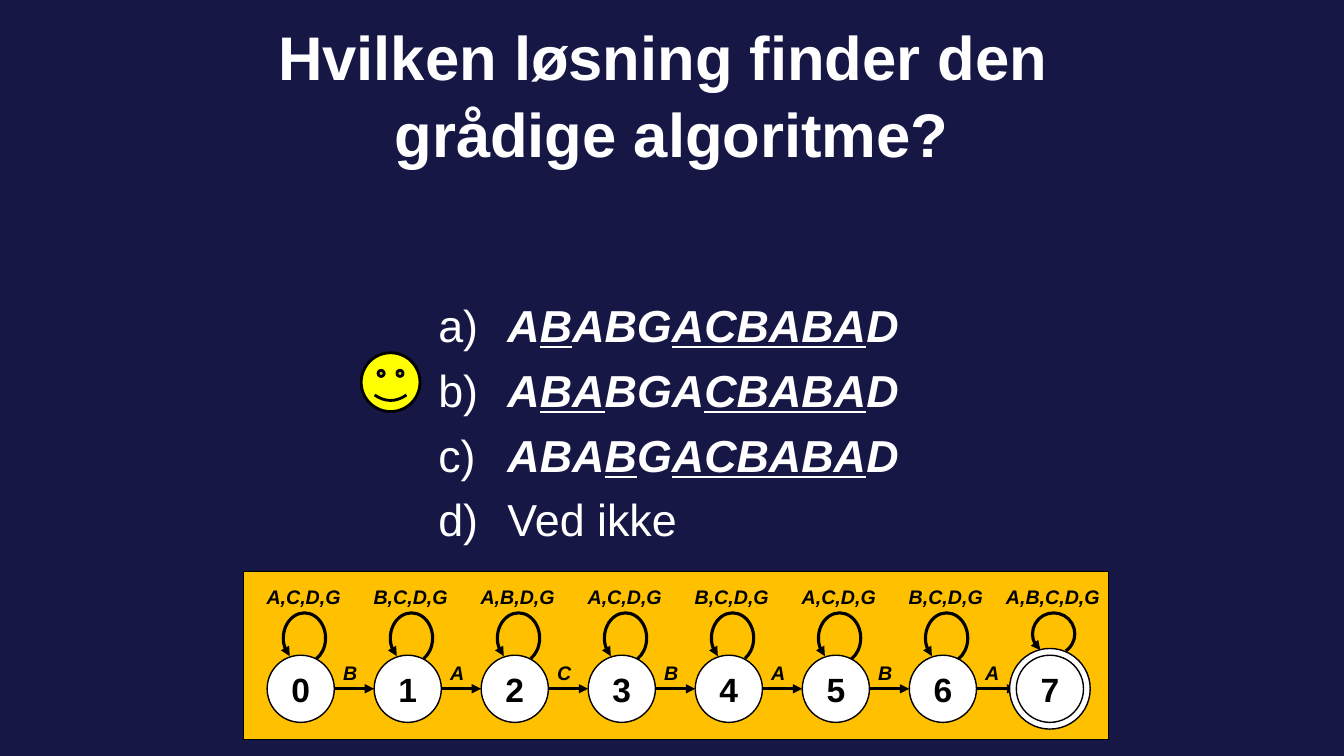
from lxml.etree import SubElement
from pptx import Presentation
from pptx.dml.color import RGBColor
from pptx.enum.shapes import MSO_CONNECTOR, MSO_SHAPE
from pptx.enum.text import MSO_ANCHOR, PP_ALIGN
from pptx.oxml.ns import qn
from pptx.util import Pt

WHITE, BLACK, YELLOW, AMBER, NAVY = "FFFFFF", "000000", "FFFF00", "FFC000", "171745"
STEP = 76.45
STATE_LEFT, STATE_TOP, STATE_SIZE = 190.8, 468, 48
LOOP_LABELS = ["A,C,D,G", "B,C,D,G", "A,B,D,G", "A,C,D,G",
               "B,C,D,G", "A,C,D,G", "B,C,D,G", "A,B,C,D,G"]
LOOP_ENDS = [36.49, 35.42, 35.42, 36.27, 34.78, 36.03, 36.03, 32.61]
MOVE_LABELS = "BACBABA"
ANSWERS = ["A|B|ABG|ACBABA|D", "A|BA|BGA|CBABA|D", "ABA|B|G|ACBABA|D"]


def rgb(value):
    """Turn a hex string into a colour."""
    return RGBColor.from_string(value)


def box(left, top, width, height):
    """Give a position and size in points."""
    return Pt(left), Pt(top), Pt(width), Pt(height)


def style_font(paragraph, size, color, bold=False, italic=False):
    """Set the font of a whole paragraph."""
    font = paragraph.font
    font.name, font.size = "Arial", Pt(size)
    font.bold, font.italic = bold, italic
    font.color.rgb = rgb(color)


def add_figure(shapes, preset, place, fill, weight):
    """Add a black-outlined preset shape."""
    figure = shapes.add_shape(preset, *box(*place))
    figure.shadow.inherit = False
    if fill:
        figure.fill.solid()
        figure.fill.fore_color.rgb = rgb(fill)
    else:
        figure.fill.background()
    figure.line.color.rgb = rgb(BLACK)
    figure.line.width = Pt(weight)
    return figure


def add_text(shapes, place, text, size, color, italic=False, anchor=MSO_ANCHOR.TOP):
    """Add a centred bold text box."""
    frame = shapes.add_textbox(*box(*place)).text_frame
    frame.word_wrap = True
    frame.vertical_anchor = anchor
    paragraph = frame.paragraphs[0]
    paragraph.text = text
    paragraph.alignment = PP_ALIGN.CENTER
    style_font(paragraph, size, color, True, italic)
    return paragraph


def add_arrowhead(line, end):
    """Put a triangle on the headEnd or tailEnd of a line."""
    SubElement(line.line._get_or_add_ln(), qn(f"a:{end}"), type="triangle")


def add_state(shapes, number):
    """Add the numbered circle of a state."""
    place = (STATE_LEFT + number * STEP, STATE_TOP, STATE_SIZE, STATE_SIZE)
    state = add_figure(shapes, MSO_SHAPE.OVAL, place, WHITE, 1)
    frame = state.text_frame
    frame.vertical_anchor = MSO_ANCHOR.MIDDLE
    paragraph = frame.paragraphs[0]
    paragraph.text = str(number)
    paragraph.alignment = PP_ALIGN.CENTER
    style_font(paragraph, 24, BLACK, True)


def add_loop(shapes, number, label, end):
    """Add the labelled arc from a state back to itself."""
    offset = number * STEP
    height = 30 if number == len(MOVE_LABELS) else 36
    loop = add_figure(shapes, MSO_SHAPE.ARC, (202.4 + offset, 437.8, 30.2, height), None, 2.25)
    loop.adjustments[0], loop.adjustments[1] = 77.48, end
    add_arrowhead(loop, "headEnd")
    add_text(shapes, (174.9 + offset, 414, 84, 24.5), label, 14, BLACK, True)


def add_move(shapes, number, label):
    """Add the labelled arrow from a state to the next."""
    offset = number * STEP
    start = STATE_LEFT + STATE_SIZE + offset
    middle = STATE_TOP + STATE_SIZE / 2
    move = shapes.add_connector(MSO_CONNECTOR.STRAIGHT, Pt(start), Pt(middle),
                                Pt(STATE_LEFT + STEP + offset), Pt(middle))
    move.line.color.rgb = rgb(BLACK)
    move.line.width = Pt(2.25)
    add_arrowhead(move, "tailEnd")
    SubElement(move._element.spPr, qn("a:effectLst"))
    add_text(shapes, (208.1 + offset, 468.7, 84, 24.5), label, 14, BLACK, True)


def add_automaton(shapes):
    """Add the state machine on its panel."""
    add_figure(shapes, MSO_SHAPE.RECTANGLE, (174, 408, 618, 120), AMBER, 0.75)
    for number, (label, end) in enumerate(zip(LOOP_LABELS, LOOP_ENDS)):
        add_loop(shapes, number, label, end)
    final = len(MOVE_LABELS)
    for number, label in enumerate(MOVE_LABELS):
        add_state(shapes, number)
        add_move(shapes, number, label)
    rim = (STATE_LEFT + final * STEP - 4.8, STATE_TOP - 4.8, 57.6, 57.6)
    add_figure(shapes, MSO_SHAPE.OVAL, rim, WHITE, 1)
    add_state(shapes, final)


def format_answer(paragraph):
    """Give an answer its letter, indent and spacing."""
    style_font(paragraph, 32, WHITE)
    paragraph.space_before = Pt(6.4)
    paragraph.line_spacing = 1.04
    properties = paragraph._p.get_or_add_pPr()
    properties.set("marL", str(Pt(40.5)))
    properties.set("indent", str(-Pt(40.5)))
    letter = properties.makeelement(qn("a:buAutoNum"), {"type": "alphaLcParenR"})
    properties.insert_element_before(letter, "a:tabLst", "a:defRPr", "a:extLst")


def add_answers(shapes):
    """Add the lettered answers, every second part underlined."""
    frame = shapes.add_textbox(*box(306, 207.4, 408, 260.6)).text_frame
    frame.word_wrap = True
    for index, answer in enumerate(ANSWERS):
        paragraph = frame.paragraphs[0] if index == 0 else frame.add_paragraph()
        format_answer(paragraph)
        paragraph.add_run().text = " "
        for part, letters in enumerate(answer.split("|")):
            run = paragraph.add_run()
            run.text = letters
            run.font.bold = run.font.italic = True
            run.font.underline = part % 2 == 1
    unsure = frame.add_paragraph()
    format_answer(unsure)
    unsure.add_run().text = " Ved ikke"


def main():
    """Build and save the slide."""
    deck = Presentation()
    deck.slide_width, deck.slide_height = Pt(960), Pt(540)
    slide = deck.slides.add_slide(deck.slide_layouts[6])
    slide.background.fill.solid()
    slide.background.fill.fore_color.rgb = rgb(NAVY)
    title = add_text(slide.shapes, (0, 21.6, 960, 90), "Hvilken løsning finder den \vgrådige algoritme?",
                     44, WHITE, anchor=MSO_ANCHOR.MIDDLE)
    title.line_spacing = 1.04
    add_answers(slide.shapes)
    smiley = add_figure(slide.shapes, MSO_SHAPE.SMILEY_FACE, (258, 252, 42, 42), YELLOW, 2)
    smiley.adjustments[0] = 0.047
    add_automaton(slide.shapes.add_group_shape().shapes)
    deck.save("out.pptx")


if __name__ == "__main__":
    main()
